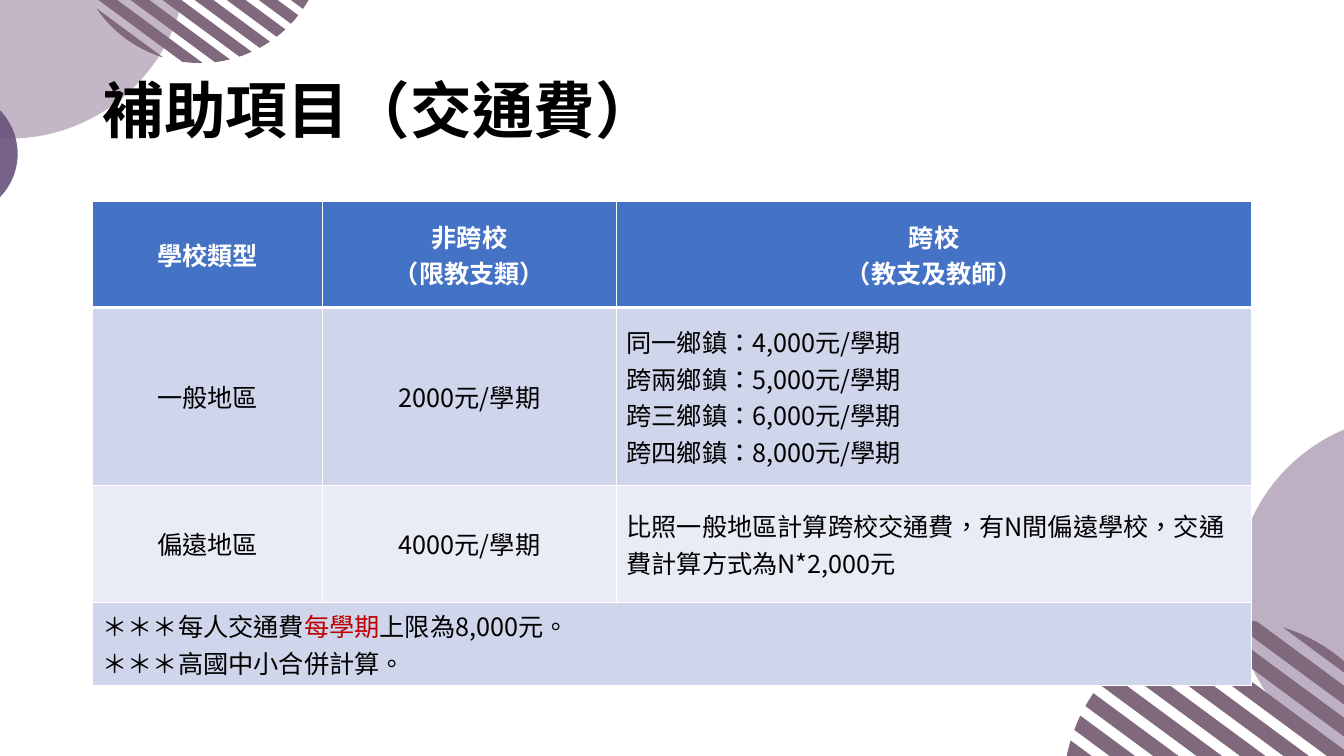
from math import asin, cos, sin, sqrt

from lxml.etree import SubElement
from pptx import Presentation
from pptx.dml.color import RGBColor
from pptx.enum.lang import MSO_LANGUAGE_ID as Lang
from pptx.enum.shapes import MSO_SHAPE as Shape
from pptx.enum.text import MSO_ANCHOR as Anchor, MSO_AUTO_SIZE as AutoSize, PP_ALIGN as Align
from pptx.oxml.ns import qn
from pptx.util import Inches, Pt

COLUMNS, ROWS = 160, 90  # square grid, twelve units to the inch
BLACK, WHITE, RED = "000000", "FFFFFF", "C00000"
LILAC, PLUM, VIOLET = "BDB0C2", "80697D", "69527C"
HEADER, BAND_DARK, BAND_LIGHT = "4472C4", "CFD5EA", "E9EBF5"


def color(hex_code):
    return RGBColor.from_string(hex_code)


def grid(units):
    return Inches(units / 12)


class SubsidySlide:
    font_name = "Noto Sans CJK SC"
    body_size = 18

    def __init__(self, deck):
        self.slide = deck.slides.add_slide(deck.slide_layouts[5])
        self.shapes = self.slide.shapes

    def run(self, paragraph, words, size, ink=BLACK, bold=False):
        run = paragraph.add_run()
        run.text = words
        font = run.font
        font.name, font.size, font.bold = self.font_name, Pt(size), bold
        font.color.rgb = color(ink)
        font.language_id = Lang.TRADITIONAL_CHINESE
        SubElement(font._element, qn("a:ea")).set("typeface", self.font_name)

    def paint(self, shape, hex_code, opacity=100):
        shape.shadow.inherit = False
        shape.fill.solid()
        shape.fill.fore_color.rgb = color(hex_code)
        shape.line.fill.background()
        if opacity < 100:
            tint = shape._element.spPr.find(qn("a:solidFill"))[0]
            SubElement(tint, qn("a:alpha")).set("val", str(opacity * 1000))

    def disc(self, group, x, y, diameter, hex_code, opacity=100):
        corner = grid(x - diameter / 2), grid(y - diameter / 2)
        disc = group.shapes.add_shape(Shape.OVAL, *corner, grid(diameter), grid(diameter))
        self.paint(disc, hex_code, opacity)

    def striped_disc(self, group, x, y, diameter):
        """Cut a disc into 14 level bands, then tilt the whole."""
        pitch, half_band, arc_steps = 0.152, 0.0445, 8
        radius = grid(diameter / 2)
        builder = None
        for band in range(-7, 7):
            middle = (band + 0.5) * pitch
            top, bottom = (asin(max(-1, min(1, middle + side * half_band)))
                           for side in (-1, 1))
            angles = [top + (bottom - top) * step / arc_steps for step in range(arc_steps + 1)]
            right = [(cos(a), sin(a)) for a in angles]
            left = [(-across, down) for across, down in reversed(right)]
            outline = [(grid(x) + radius * across, grid(y) + radius * down)
                       for across, down in right + left]
            if builder is None:
                builder = group.shapes.build_freeform(*outline[0])
            else:
                builder.move_to(*outline[0])
            builder.add_line_segments(outline[1:], close=True)
        stripes = builder.convert_to_shape()
        stripes.rotation = 36.4
        self.paint(stripes, PLUM)

    def title(self, words, left, top, width, height):
        title = self.shapes.title
        title.left, title.top = grid(left), grid(top)
        title.width, title.height = grid(width), grid(height)
        frame = title.text_frame
        frame.word_wrap, frame.auto_size = True, AutoSize.NONE
        frame.vertical_anchor = Anchor.MIDDLE
        heading = frame.paragraphs[0]
        heading.alignment, heading.line_spacing = Align.LEFT, 0.9
        self.run(heading, words, 44, bold=True)
        self.shapes._spTree.append(title._element)  # bring in front of the discs

    def borders(self, cell, widths):
        """Draw white cell borders; widths are points for L, R, T, B."""
        properties = cell._tc.get_or_add_tcPr()
        for side, points in zip("LRTB", widths):
            line = SubElement(properties, qn(f"a:ln{side}"), w=str(Pt(points)))
            fill = SubElement(line, qn("a:solidFill"))
            SubElement(fill, qn("a:srgbClr"), val=WHITE)

    def cell(self, cell, lines, fill, align, ink, bold, widths):
        """Fill one cell; a line is a string or a list of (words, ink)."""
        self.borders(cell, widths)
        cell.fill.solid()
        cell.fill.fore_color.rgb = color(fill)
        cell.vertical_anchor = Anchor.MIDDLE
        frame = cell.text_frame
        for number, line in enumerate(lines):
            paragraph = frame.add_paragraph() if number else frame.paragraphs[0]
            paragraph.alignment = align
            for words, tone in [(line, ink)] if isinstance(line, str) else line:
                self.run(paragraph, words, self.body_size, tone, bold)

    def table(self, content, left, top, widths, heights):
        table = self.shapes.add_table(len(heights), len(widths), grid(left), grid(top),
                                      grid(sum(widths)), grid(sum(heights))).table
        for column, width in zip(table.columns, widths):
            column.width = grid(width)
        for row, height in zip(table.rows, heights):
            row.height = grid(height)
        last = len(widths) - 1
        for r, texts in enumerate(content):
            header = r == 0
            fill = HEADER if header else (BAND_LIGHT, BAND_DARK)[r % 2]
            if len(texts) == 1:
                table.cell(r, 0).merge(table.cell(r, last))
            for c, lines in enumerate(texts):
                centred = header or (len(texts) > 1 and c < last)
                self.cell(table.cell(r, c), lines, fill,
                          Align.CENTER if centred else Align.LEFT,
                          WHITE if header else BLACK, header,
                          (1, 1, 3 if r == 1 else 1, 3 if header else 1))


def main():
    deck = Presentation()
    deck.slide_width, deck.slide_height = grid(COLUMNS), grid(ROWS)
    page = SubsidySlide(deck)

    upper_left = page.shapes.add_group_shape()
    page.disc(upper_left, 1.1, -4.6, 42.2, LILAC, 90)
    page.striped_disc(upper_left, 23.8, -7.4, 29.8)
    page.disc(upper_left, -5.3, 18.3, 14.8, VIOLET, 90)

    page.title("補助項目（交通費）", 11, 4.8, 138, 17.4)

    lower_right = page.shapes.add_group_shape()
    page.disc(lower_right, 168.2, 70.6, 42.2, LILAC)
    page.striped_disc(lower_right, 146.8, 94, 40.4)

    township_rates = [("同一", "4"), ("跨兩", "5"), ("跨三", "6"), ("跨四", "8")]
    fares = [
        [["學校類型"], ["非跨校", "（限教支類）"], ["跨校", "（教支及教師）"]],
        [["一般地區"], ["2000元/學期"],
         [f"{span}鄉鎮：{thousands},000元/學期" for span, thousands in township_rates]],
        [["偏遠地區"], ["4000元/學期"],
         ["比照一般地區計算跨校交通費，有N間偏遠學校，交通費計算方式為N*2,000元"]],
        [[[("＊＊＊每人交通費", BLACK), ("每學期", RED), ("上限為8,000元。", BLACK)],
          "＊＊＊高國中小合併計算。"]],
    ]
    page.table(fares, 11, 24, (27.4, 35, 75.6), (12.6, 21.2, 13.9, 9.1))
    deck.save("out.pptx")


if __name__ == "__main__":
    main()
